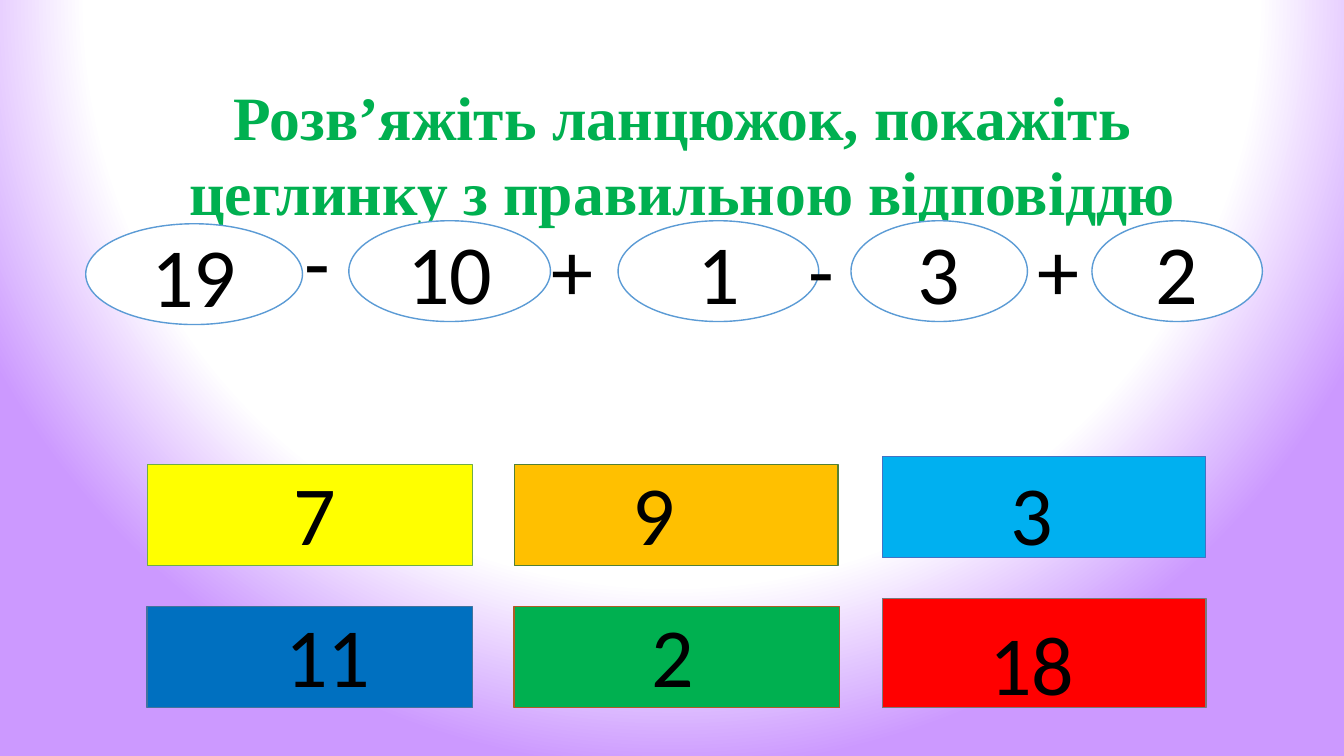
"""Build a slide with a chain of sums and six coloured answer bricks."""
from pptx import Presentation, oxml, util as u
from pptx.dml.color import RGBColor
from pptx.enum import shapes, text

SCALE = 9144
BLACK = "000000"
TITLE = "Розв’яжіть ланцюжок, покажіть цеглинку з правильною відповіддю"
BRICKS = [
    ((146, 461, 323, 100), "FFFF00", "70AD47", 0.5),
    ((510, 461, 321, 100), "FFC000", "538035", 1),
    ((875, 453, 321, 100), "00B0F0", "4472C4", 0.5),
    ((146, 602, 323, 100), "0070C0", "43739E", 1),
    ((510, 602, 323, 100), "00B050", "AF5C24", 1),
    ((875, 594, 321, 108), "FF0000", "7A7A7A", 1),
]
ANSWERS = [
    ("7", (187, 453, 331, 111), 104),
    ("9", (542, 453, 323, 111), 85),
    ("3", (917, 453, 271, 111), 85),
    ("11", (198, 594, 250, 111), 85),
    ("2", (542, 594, 271, 111), 104),
    ("18", (896, 602, 281, 111), 85),
]
NUMBERS = [
    ("19", (85, 222, 215, 100)),
    ("10", (346, 219, 200, 100)),
    ("1", (613, 219, 199, 100)),
    ("3", (844, 219, 175, 100)),
    ("2", (1083, 219, 169, 100)),
]
SIGNS = [
    ("-", (292, 203, 103, 111)),
    ("+", (537, 211, 104, 111)),
    ("-", (792, 211, 58, 111)),
    ("+", (1019, 211, 52, 111)),
]
BACKGROUND = """<p:bg
  xmlns:p="http://schemas.openxmlformats.org/presentationml/2006/main"
  xmlns:a="http://schemas.openxmlformats.org/drawingml/2006/main">
  <p:bgPr><a:gradFill rotWithShape="1"><a:gsLst>
    <a:gs pos="0"><a:srgbClr val="FFFFFF"/></a:gs>
    <a:gs pos="76000"><a:srgbClr val="FFFFFF"/></a:gs>
    <a:gs pos="100000"><a:srgbClr val="CC99FF"/></a:gs>
  </a:gsLst><a:path path="circle">
    <a:fillToRect l="50000" t="-80000" r="50000" b="180000"/>
  </a:path></a:gradFill><a:effectLst/></p:bgPr></p:bg>"""


def px(*lengths):
    """Turn pixel lengths into EMU."""
    return [u.Emu(length * SCALE) for length in lengths]


def color(value):
    """Turn a hex string into a colour."""
    return RGBColor.from_string(value)


def write(para, wording, size=60, font="Calibri", ink=BLACK, bold=False):
    """Add one formatted run to a paragraph."""
    span = para.add_run()
    span.text = wording
    span.font.size = u.Pt(size)
    span.font.name = font
    span.font.bold = bold
    span.font.color.rgb = color(ink)


def add_title(page):
    """Place the heading in the title placeholder."""
    title = page.shapes.title
    title.left, title.top, title.width, title.height = px(125, 72, 1104, 158)
    frame = title.text_frame
    frame.word_wrap = True
    frame.auto_size = text.MSO_AUTO_SIZE.NONE
    frame.vertical_anchor = text.MSO_ANCHOR.TOP
    para = frame.paragraphs[0]
    para.alignment = text.PP_ALIGN.CENTER
    para.line_spacing = u.Pt(53.5)
    write(para, TITLE, 44, "Times New Roman", "00B050", True)


def add_figure(page, kind, place, fill, line, weight):
    """Add a filled and outlined preset shape."""
    figure = page.shapes.add_shape(kind, *px(*place))
    figure.shadow.inherit = False
    figure.fill.solid()
    figure.fill.fore_color.rgb = color(fill)
    figure.line.color.rgb = color(line)
    figure.line.width = u.Pt(weight)
    return figure


def add_number(page, wording, place):
    """Add an oval of the chain with its number."""
    oval = add_figure(page, shapes.MSO_SHAPE.OVAL, place, "FFFFFF", "5B9BD5", 1)
    frame = oval.text_frame
    frame.vertical_anchor = text.MSO_ANCHOR.MIDDLE
    para = frame.paragraphs[0]
    para.alignment = text.PP_ALIGN.CENTER
    write(para, wording)


def add_label(page, wording, place, inset=10):
    """Add a text box whose text starts after the inset."""
    box = page.shapes.add_textbox(*px(*place))
    frame = box.text_frame
    frame.word_wrap = True
    frame.margin_left = px(inset)[0]
    write(frame.paragraphs[0], wording)


def main():
    """Assemble and save the deck."""
    deck = Presentation()
    deck.slide_width, deck.slide_height = px(1333, 750)
    page = deck.slides.add_slide(deck.slide_layouts[5])
    page.element.cSld.insert(0, oxml.parse_xml(BACKGROUND))
    add_title(page)
    for brick in BRICKS:
        add_figure(page, shapes.MSO_SHAPE.RECTANGLE, *brick)
    for answer in ANSWERS:
        add_label(page, *answer)
    for number in NUMBERS:
        add_number(page, *number)
    for sign in SIGNS:
        add_label(page, *sign)
    deck.save("out.pptx")


if __name__ == "__main__":
    main()
